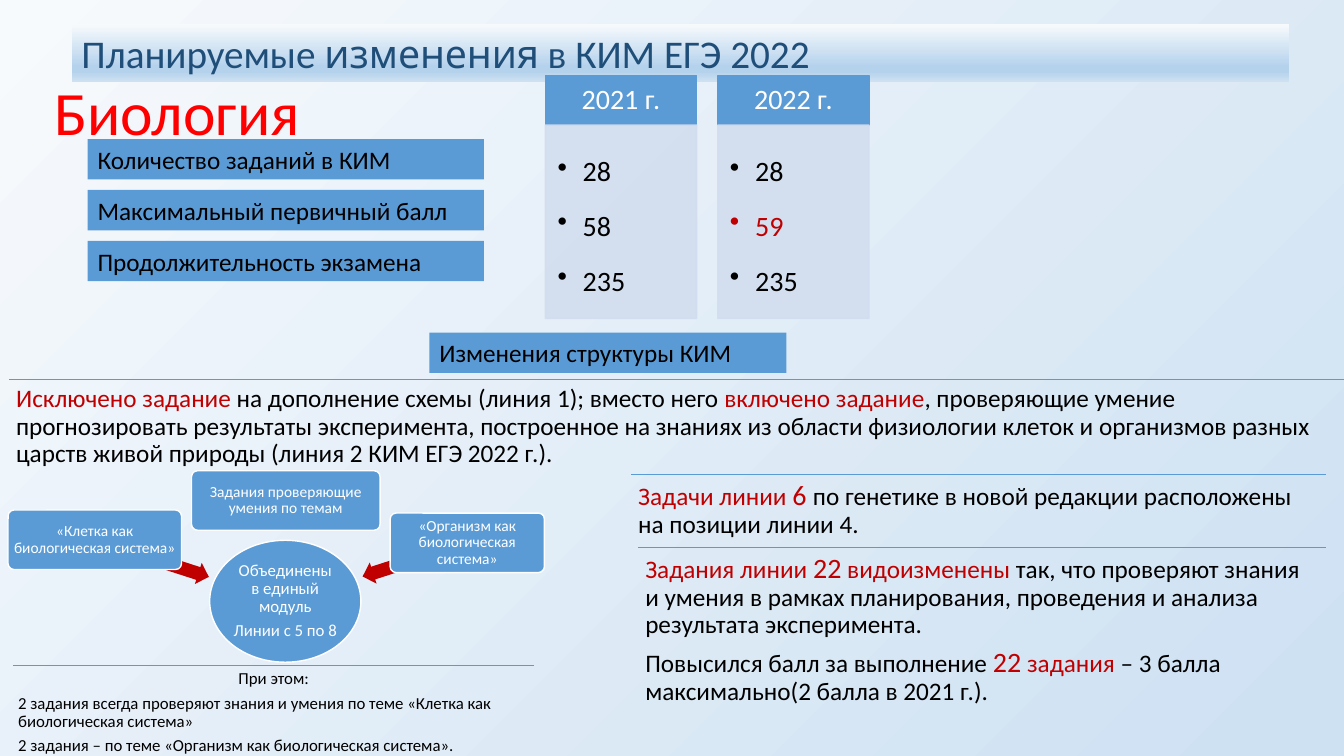
from pptx import Presentation
from pptx.dml.color import RGBColor
from pptx.enum.shapes import MSO_CONNECTOR, MSO_SHAPE
from pptx.enum.text import MSO_ANCHOR, PP_ALIGN
from pptx.oxml.ns import qn
from pptx.util import Inches, Pt
from lxml.etree import SubElement

BLUE, PALE, RED, BLACK, WHITE = "5B9BD5", "D2DEEF", "C00000", "000000", "FFFFFF"
MID, TOP = MSO_ANCHOR.MIDDLE, MSO_ANCHOR.TOP
LEFT, CENTER = PP_ALIGN.LEFT, PP_ALIGN.CENTER


def rgb(code):
    return RGBColor.from_string(code)


def assign(target, values):
    for name, value in values.items():
        setattr(target, name, value)


class Board:
    """Holds the slide and its style."""

    def __init__(self, slide):
        self.slide = slide
        self.font = "Calibri"
        self.rule = 0.5
        self.edge = 1

    def blend(self, fill, root, stops, angle):
        fill.gradient()
        fill.gradient_angle = angle
        group = next(root.iter(qn("a:gsLst")))
        for stop in list(group):
            group.remove(stop)
        for place, code in stops:
            stop = SubElement(group, qn("a:gs"), pos=str(place * 1000))
            SubElement(stop, qn("a:srgbClr"), val=code)

    def letter(self, shape, paras, size=18, color=BLACK, align=LEFT, anchor=TOP,
               pad=(0.1, 0.05, 0.1, 0.05), lead=0.9, after=0.37, bullet=False):
        """Each paragraph is a list of runs: (text, colour, size, font)."""
        frame = shape.text_frame
        sides = ("left", "top", "right", "bottom")
        margins = {f"margin_{s}": Inches(v) for s, v in zip(sides, pad)}
        assign(frame, {"word_wrap": True, "vertical_anchor": anchor, **margins})
        for i, runs in enumerate(paras):
            para = frame.add_paragraph() if i else frame.paragraphs[0]
            assign(para, {"alignment": align, "line_spacing": lead,
                          "space_after": Pt(round(size * after, 1))})
            if bullet:
                props = para._p.get_or_add_pPr()
                props.set("marL", str(Inches(0.25)))
                props.set("indent", str(-Inches(0.25)))
                SubElement(props, qn("a:buChar"), char="•")
            for item in runs:
                text, hue, pts, face = (tuple(item) + (None,) * 3)[:4]
                run = para.add_run()
                run.text = text
                assign(run.font, {"name": face or self.font, "size": Pt(pts or size)})
                run.font.color.rgb = rgb(hue or color)

    def shape(self, kind, box, fill=BLUE, line=None, alpha=None, adj=(), turn=0):
        item = self.slide.shapes.add_shape(kind, *map(Inches, box))
        item.shadow.inherit = False
        item.rotation = turn
        for i, value in enumerate(adj):
            item.adjustments[i] = value
        item.fill.solid()
        item.fill.fore_color.rgb = rgb(fill)
        if line:
            item.line.color.rgb = rgb(line)
            item.line.width = Pt(self.edge)
        else:
            item.line.fill.background()
        if alpha:
            for tone in item._element.spPr.iter(qn("a:srgbClr")):
                SubElement(tone, qn("a:alpha"), val=str(alpha * 1000))
        return item

    def label(self, box, text):
        self.letter(self.shape(MSO_SHAPE.RECTANGLE, box), [[(text,)]], lead=1.0, after=0)

    def text(self, box, paras, **style):
        item = self.slide.shapes.add_textbox(*map(Inches, box))
        self.letter(item, paras, **style)
        return item

    def line(self, left, top, width):
        item = self.slide.shapes.add_connector(
            MSO_CONNECTOR.STRAIGHT, *map(Inches, (left, top, left + width, top)))
        item.line.color.rgb = rgb(BLUE)
        item.line.width = Pt(self.rule)
        SubElement(item._element.spPr, qn("a:effectLst"))

    def note(self, box, paras, size=18, pad=0.07):
        """Text under a thin rule."""
        self.line(*box[:3])
        return self.text(box, paras, size=size, pad=(pad,) * 4)

    def column(self, left, head, values):
        top = self.shape(MSO_SHAPE.RECTANGLE, (left, 0.75, 1.5, 0.49), line=BLUE)
        self.letter(top, [[(head,)]], size=20, color=WHITE, align=CENTER,
                    anchor=MID, pad=(0.16, 0.09, 0.16, 0.09))
        body = self.shape(MSO_SHAPE.RECTANGLE, (left, 1.24, 1.5, 1.92), PALE, PALE, 90)
        self.letter(body, [[v] for v in values], size=20, lead=1.5, after=0.15,
                    pad=(0.12, 0.12, 0.16, 0.17), bullet=True)

    def topic(self, box, text):
        item = self.shape(MSO_SHAPE.ROUNDED_RECTANGLE, box, line=WHITE, adj=(0.1,))
        self.letter(item, [[(text,)]], size=11, color=WHITE, align=CENTER,
                    anchor=MID, pad=(0.02,) * 4)

    def arrow(self, box, turn):
        self.shape(MSO_SHAPE.LEFT_ARROW, box, RED, adj=(0.6, 0.5), turn=turn)


def main():
    deck = Presentation()
    assign(deck, {"slide_width": Inches(13.33), "slide_height": Inches(7.5)})
    slide = deck.slides.add_slide(deck.slide_layouts[6])
    board = Board(slide)
    board.blend(slide.background.fill, slide._element,
                [(0, "F7FAFD"), (97, "CEE1F2")], 315)

    # Subject and heading bar
    board.text((0.44, 0.75, 3.13, 0.79), [[("Биология", "FF0000")]],
               size=44, anchor=MID, after=0)
    bar = board.shape(MSO_SHAPE.RECTANGLE, (0.71, 0.24, 12.08, 0.57))
    board.blend(bar.fill, bar._element, [(0, "F7FAFD"), (74, "B5D2EC"),
                                         (83, "B5D2EC"), (100, "CEE1F2")], 270)
    board.letter(bar, [[("Планируемые ",), ("изменения", None, None, "Cabin"),
                        (" в КИМ ЕГЭ 2022",)]],
                 size=28, color="1F4E79", lead=1.0, after=0)

    # Exam figures by year
    names = ("Количество заданий в КИМ", "Максимальный первичный балл",
             "Продолжительность экзамена")
    for i, name in enumerate(names):
        board.label((0.87, 1.38 + i * 0.505, 3.93, 0.4), name)
    board.column(5.41, "2021 г.", [("28",), ("58",), ("235",)])
    board.column(7.12, "2022 г.", [("28",), ("59", RED), ("235",)])

    # Structure changes
    board.label((4.26, 3.3, 3.54, 0.4), "Изменения структуры КИМ")
    board.note((0.09, 3.76, 13.24, 0.94), [[
        ("Исключено задание ", RED),
        ("на дополнение схемы (линия 1); вместо него ",),
        ("включено задание", RED),
        (", проверяющие умение прогнозировать результаты эксперимента, построенное "
         "на знаниях из области физиологии клеток и организмов разных царств живой "
         "природы (линия 2 КИМ ЕГЭ 2022 г.).",)]])

    # Topics merged into one module
    hub = board.shape(MSO_SHAPE.OVAL, (2.08, 5.36, 1.5, 1.21), line=WHITE)
    board.letter(hub, [[("Объединены в единый модуль",)], [("Линии с 5 по 8",)]],
                 size=12, color=WHITE, align=CENTER, anchor=MID, pad=(0.01,) * 4)
    board.arrow((0.91, 5.43, 1.19, 0.22), 197.9)
    board.topic((0.08, 5.06, 1.72, 0.59), "«Клетка как биологическая система»")
    board.topic((1.9, 4.67, 1.87, 0.59), "Задания проверяющие умения по темам")
    board.arrow((3.57, 5.44, 1.1, 0.22), 342.1)
    board.topic((3.87, 5.09, 1.53, 0.59), "«Организм как биологическая система»")
    terms = board.note((0.13, 6.6, 5.17, 0.9), [
        [("При этом:",)],
        [("2 задания всегда проверяют знания и умения по теме "
          "«Клетка как биологическая система»",)],
        [("2 задания – по теме «Организм как биологическая система».",)]],
        size=12, pad=0.05)
    terms.text_frame.paragraphs[0].alignment = CENTER

    # Changes to lines 6 and 22
    board.note((6.26, 4.71, 6.89, 0.73), [[
        ("Задачи линии ", RED), ("6 ", RED, 20),
        ("по генетике в новой редакции расположены на позиции линии 4.",)]])
    board.note((6.33, 5.43, 6.82, 2.07), [
        [("Задания линии ", RED), ("22", RED, 20), (" видоизменены ", RED),
         ("так, что проверяют знания и умения в рамках планирования, проведения "
          "и анализа результата эксперимента.",)],
        [("Повысился балл за выполнение ",), ("22", RED, 20), (" задания ", RED),
         ("– 3 балла максимально(2 балла в 2021 г.).",)]])

    deck.save("out.pptx")


if __name__ == "__main__":
    main()
